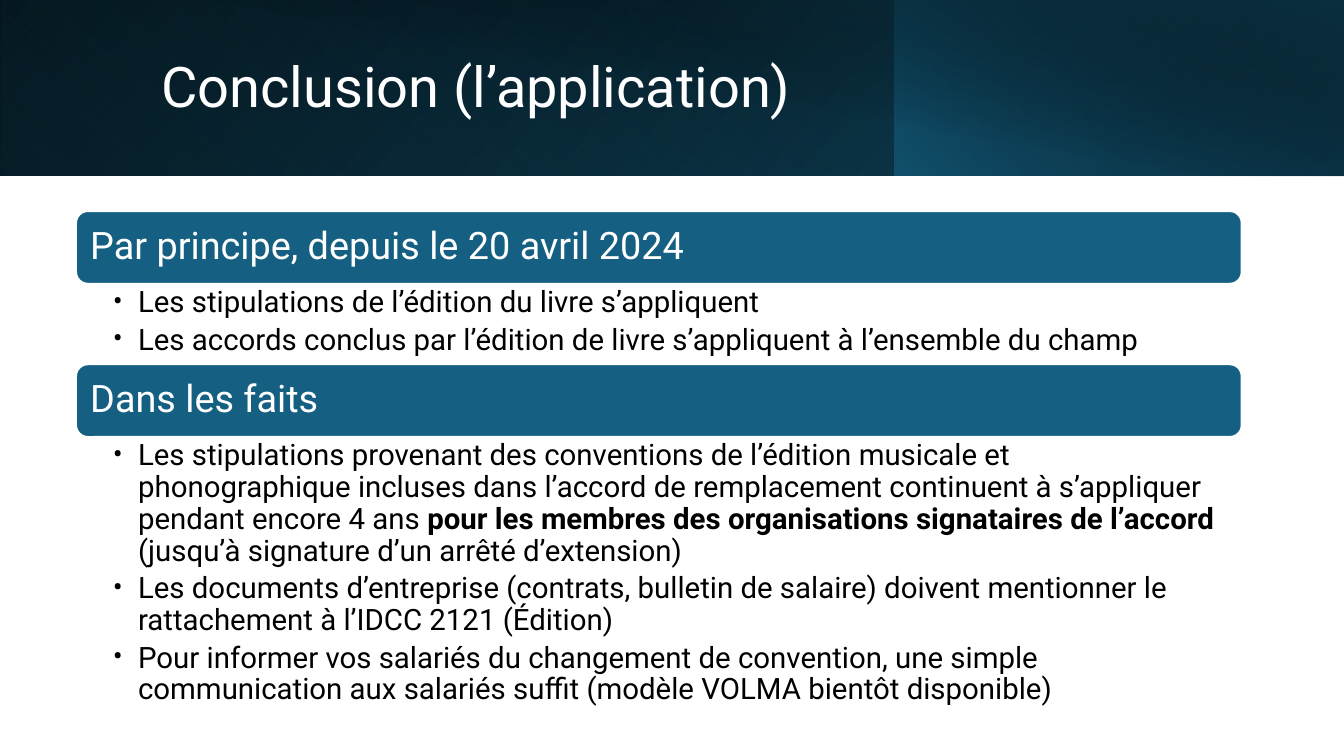
from dataclasses import dataclass

from lxml import etree
from pptx import Presentation
from pptx.dml.color import RGBColor
from pptx.enum.shapes import MSO_SHAPE
from pptx.enum.text import MSO_ANCHOR, MSO_AUTO_SIZE, PP_ALIGN
from pptx.oxml.ns import qn
from pptx.util import Inches, Pt

RECT = MSO_SHAPE.RECTANGLE
ROUND = MSO_SHAPE.ROUNDED_RECTANGLE
MIDDLE, TOP = MSO_ANCHOR.MIDDLE, MSO_ANCHOR.TOP
LEFT = PP_ALIGN.LEFT
NO_FIT = MSO_AUTO_SIZE.NONE


@dataclass(frozen=True)
class Theme:
    font: str = "Roboto"
    white: str = "FFFFFF"
    black: str = "000000"
    blue: str = "156082"
    deep: str = "104862"
    night: str = "0B3041"
    title: int = 40
    head: int = 27
    body: int = 21


theme = Theme()


def shade(shape, stops, angle):
    """Fill with a linear gradient; stops are (position, colour, opacity) in percent."""
    props = shape.fill._xPr
    grad = etree.Element(qn("a:gradFill"), rotWithShape="1")
    marks = etree.SubElement(grad, qn("a:gsLst"))
    for place, color, alpha in stops:
        mark = etree.SubElement(marks, qn("a:gs"), pos=str(place * 1000))
        tint = etree.SubElement(mark, qn("a:srgbClr"), val=color)
        etree.SubElement(tint, qn("a:alpha"), val=str(alpha * 1000))
    etree.SubElement(grad, qn("a:lin"), ang=str(angle * 60000), scaled="0")
    props.find(qn("a:prstGeom")).addnext(grad)


def style(para, size, color, after=0):
    para.alignment = LEFT
    para.line_spacing = 0.9
    para.space_before = Pt(0)
    para.space_after = Pt(after)
    para.font.name = theme.font
    para.font.size = Pt(size)
    para.font.color.rgb = RGBColor.from_string(color)


deck = Presentation()
deck.slide_width, deck.slide_height = Inches(13.33), Inches(7.5)
slide = deck.slides.add_slide(deck.slide_layouts[5])
shapes = slide.shapes

# Banner: left, width, height, turn, mirrored, stops, angle
layers = [
    (0, 13.33, 1.74, 0, True, [(0, theme.black, 100), (100, theme.deep, 100)], 140),
    (0, 8.88, 1.74, 180, True, [(20, theme.blue, 0), (100, theme.night, 55)], 230),
    (8.87, 4.46, 1.74, 0, True, [(0, theme.blue, 66), (100, theme.black, 30)], 220),
    (0.5, 12.83, 1.75, 0, False, [(50, theme.black, 0), (99, theme.night, 52)], 280),
]
for left, width, height, turn, mirror, stops, angle in layers:
    layer = shapes.add_shape(RECT, Inches(left), 0, Inches(width), Inches(height))
    layer.shadow.inherit = False
    layer.line.fill.background()
    layer.rotation = turn
    if mirror:
        layer._element.spPr.find(qn("a:xfrm")).set("flipH", "1")
    shade(layer, stops, angle)

# Title, in front of the banner
title = shapes.title
title.left, title.top = Inches(1.5), Inches(0.32)
title.width, title.height = Inches(10.82), Inches(1.13)
frame = title.text_frame
frame.text = "Conclusion (l’application)"
frame.auto_size = NO_FIT
frame.vertical_anchor = MIDDLE
style(frame.paragraphs[0], theme.title, theme.white)
shapes._spTree.append(title._element)

# Sections: top, body height, heading, points made of (text, bold) runs
parts = [
    (2.09, 0.79, "Par principe, depuis le 20 avril 2024", [
        [("Les stipulations de l’édition du livre s’appliquent", False)],
        [("Les accords conclus par l’édition de livre s’appliquent à l’ensemble du champ", False)],
    ]),
    (3.61, 2.81, "Dans les faits", [
        [("Les stipulations provenant des conventions de l’édition musicale et "
          "phonographique incluses dans l’accord de remplacement continuent à "
          "s’appliquer pendant encore 4 ans ", False),
         ("pour les membres des organisations signataires de l’accord ", True),
         ("(jusqu’à signature d’un arrêté d’extension)", False)],
        [("Les documents d’entreprise (contrats, bulletin de salaire) doivent "
          "mentionner le rattachement à l’IDCC 2121 (Édition)", False)],
        [("Pour informer vos salariés du changement de convention, une simple "
          "communication aux salariés suffit (modèle VOLMA bientôt disponible)", False)],
    ]),
]
edge, span, tall = Inches(0.75), Inches(11.57), Inches(0.73)
for top, height, head, points in parts:
    bar = shapes.add_shape(ROUND, edge, Inches(top), span, tall)
    bar.shadow.inherit = False
    bar.fill.solid()
    bar.fill.fore_color.rgb = RGBColor.from_string(theme.blue)
    bar.line.color.rgb = RGBColor.from_string(theme.white)
    bar.line.width = Pt(2)
    frame = bar.text_frame
    frame.text = head
    frame.word_wrap = True
    frame.vertical_anchor = MIDDLE
    frame.margin_left = frame.margin_right = Inches(0.11)
    style(frame.paragraphs[0], theme.head, theme.white)

    box = shapes.add_textbox(edge, Inches(top + 0.72), span, Inches(height))
    frame = box.text_frame
    frame.word_wrap = True
    frame.vertical_anchor = TOP
    frame.margin_left, frame.margin_right = Inches(0.37), Inches(0.21)
    frame.margin_top = frame.margin_bottom = Inches(0.04)
    for row, runs in enumerate(points):
        para = frame.add_paragraph() if row else frame.paragraphs[0]
        style(para, theme.body, theme.black, after=4.2)
        props = para._p.get_or_add_pPr()
        props.set("marL", str(Inches(0.25)))
        props.set("indent", str(-Inches(0.25)))
        face = etree.Element(qn("a:buFont"), typeface=theme.font)
        dot = etree.Element(qn("a:buChar"), char="•")
        for mark in (face, dot):
            props.find(qn("a:defRPr")).addprevious(mark)
        for text, bold in runs:
            run = para.add_run()
            run.text = text
            run.font.bold = bold

deck.save("out.pptx")
